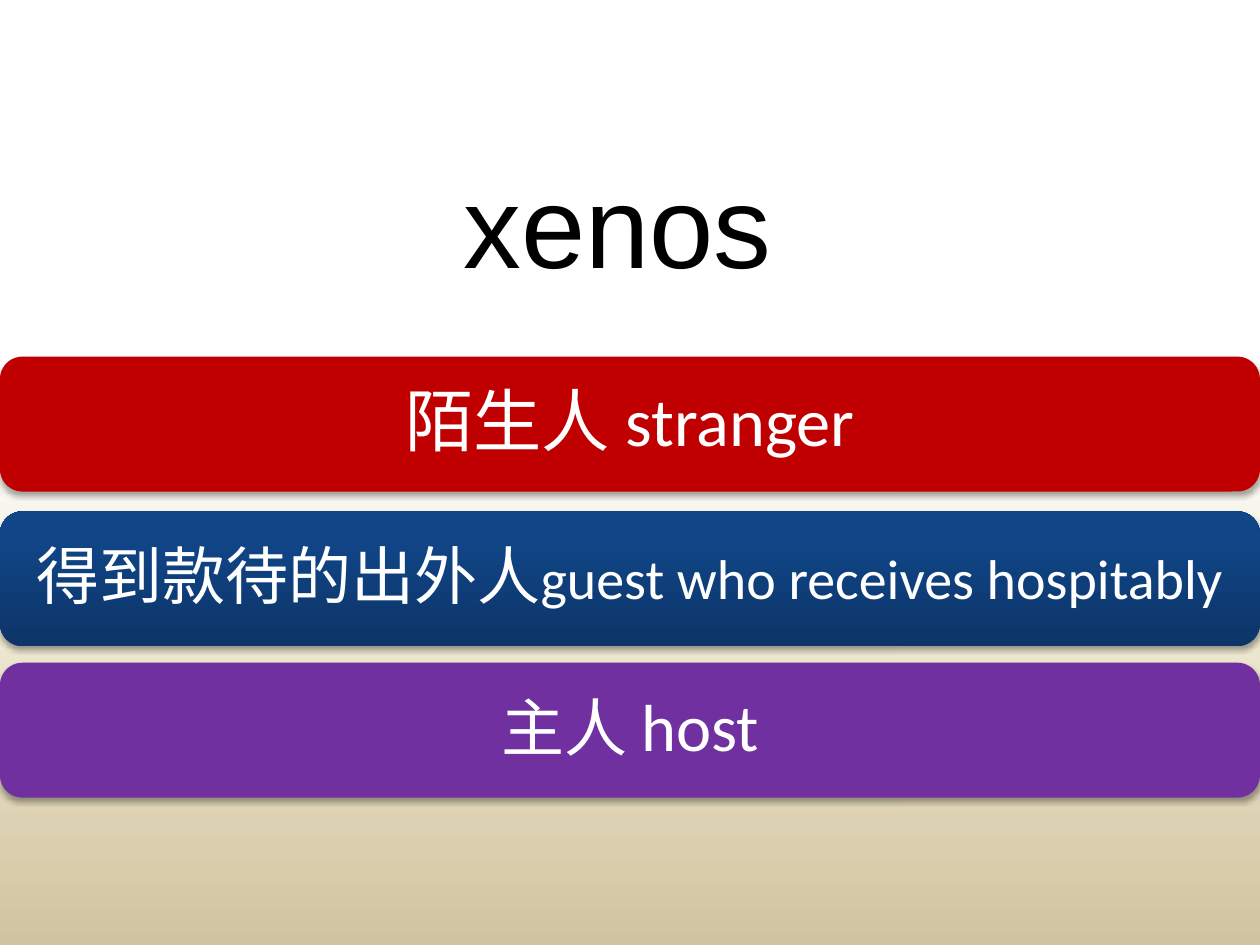
from lxml import etree
from pptx import Presentation
from pptx import util as u
from pptx.dml.color import RGBColor
from pptx.enum import shapes, text
from pptx.oxml import parse_xml
from pptx.oxml.ns import nsdecls, qn

WHITE = RGBColor(0xFF, 0xFF, 0xFF)
BLACK = RGBColor(0, 0, 0)
RED = RGBColor(0xC0, 0, 0)
PURPLE = RGBColor(0x70, 0x30, 0xA0)
CREAM = RGBColor(0xF0, 0xEB, 0xD5)
SAND = RGBColor(0xD1, 0xC3, 0x9F)
NAVY = RGBColor(0x0D, 0x35, 0x68)
BLUE = RGBColor(0x10, 0x45, 0x87)
BRIGHT_BLUE = RGBColor(0x0E, 0x45, 0x8A)

SLIDE_WIDTH, SLIDE_HEIGHT = 25.4, 19.05
BAR_HEIGHT = 2.72
LABEL_MARGIN = 0.13
LABEL_INSET = 0.39

SHADOW = (
    f'<a:outerShdw {nsdecls("a")} blurRad="{u.Pt(3.1)}" dist="{u.Pt(1.8)}" '
    'dir="5400000" rotWithShape="0"><a:srgbClr val="000000">'
    '<a:alpha val="35000"/></a:srgbClr></a:outerShdw>'
)


class Deck:
    """Holds the style and the current slide."""

    latin, cjk = "Calibri", "Arial"

    def __init__(self):
        self.prs = Presentation()
        self.prs.slide_width = u.Cm(SLIDE_WIDTH)
        self.prs.slide_height = u.Cm(SLIDE_HEIGHT)
        self.slide = self.prs.slides.add_slide(self.prs.slide_layouts[6])

    def gradient(self, fill, owner, stops, angle):
        fill.gradient()
        fill.gradient_angle = angle
        stop_list = next(owner.iter(qn("a:gsLst")))
        stop_list.clear()
        for percent, color in stops:
            stop = etree.SubElement(stop_list, qn("a:gs"), pos=str(percent * 1000))
            etree.SubElement(stop, qn("a:srgbClr"), val=str(color))

    def background(self, stops):
        fill = self.slide.background.fill
        self.gradient(fill, self.slide.element, stops, 270)

    def add_runs(self, paragraph, runs, color):
        for words, size, font in runs:
            run = paragraph.add_run()
            run.text = words
            run.font.size = u.Pt(size)
            run.font.name = font
            run.font.color.rgb = color

    def bar(self, top, paint):
        bar = self.slide.shapes.add_shape(
            shapes.MSO_SHAPE.ROUNDED_RECTANGLE,
            0, u.Cm(top), u.Cm(SLIDE_WIDTH), u.Cm(BAR_HEIGHT))
        if isinstance(paint, RGBColor):
            bar.fill.solid()
            bar.fill.fore_color.rgb = paint
        else:
            self.gradient(bar.fill, bar.element, paint, 90)
        bar.line.fill.background()
        bar.shadow.inherit = False
        bar.element.spPr.find(qn("a:effectLst")).append(parse_xml(SHADOW))

    def label(self, top, runs):
        box = self.slide.shapes.add_textbox(
            u.Cm(LABEL_MARGIN), u.Cm(top + LABEL_MARGIN),
            u.Cm(SLIDE_WIDTH - 2 * LABEL_MARGIN),
            u.Cm(BAR_HEIGHT - 2 * LABEL_MARGIN))
        frame = box.text_frame
        frame.word_wrap = True
        frame.vertical_anchor = text.MSO_ANCHOR.MIDDLE
        frame.margin_left = frame.margin_right = u.Cm(LABEL_INSET)
        frame.margin_top = frame.margin_bottom = u.Cm(LABEL_INSET)
        paragraph = frame.paragraphs[0]
        paragraph.alignment = text.PP_ALIGN.CENTER
        paragraph.line_spacing = 0.9
        self.add_runs(paragraph, runs, WHITE)

    def title(self, left, top, width, height, words, size):
        box = self.slide.shapes.add_textbox(*map(u.Cm, (left, top, width, height)))
        frame = box.text_frame
        frame.word_wrap = False
        frame.auto_size = text.MSO_AUTO_SIZE.SHAPE_TO_FIT_TEXT
        self.add_runs(frame.paragraphs[0], [(words, size, self.cjk)], BLACK)


def main():
    deck = Deck()
    deck.background([(44, WHITE), (65, CREAM), (100, SAND)])

    # Three meanings: top, paint, Chinese and English wording with sizes
    meanings = [
        (7.19, RED, ("陌生人 ", 39), ("stranger", 39)),
        (10.31, [(0, NAVY), (80, BLUE), (100, BRIGHT_BLUE)],
         ("得到款待的出外人", 36), ("guest who receives hospitably", 32)),
        (13.36, PURPLE, ("主人 ", 36), ("host", 38)),
    ]
    for top, paint, chinese, english in meanings:
        deck.bar(top, paint)
        deck.label(top, [(*chinese, deck.cjk), (*english, deck.latin)])

    # Greek word being explained
    deck.title(9.09, 2.97, 6.78, 3.07, "xenos", 66)

    deck.prs.save("out.pptx")


if __name__ == "__main__":
    main()
